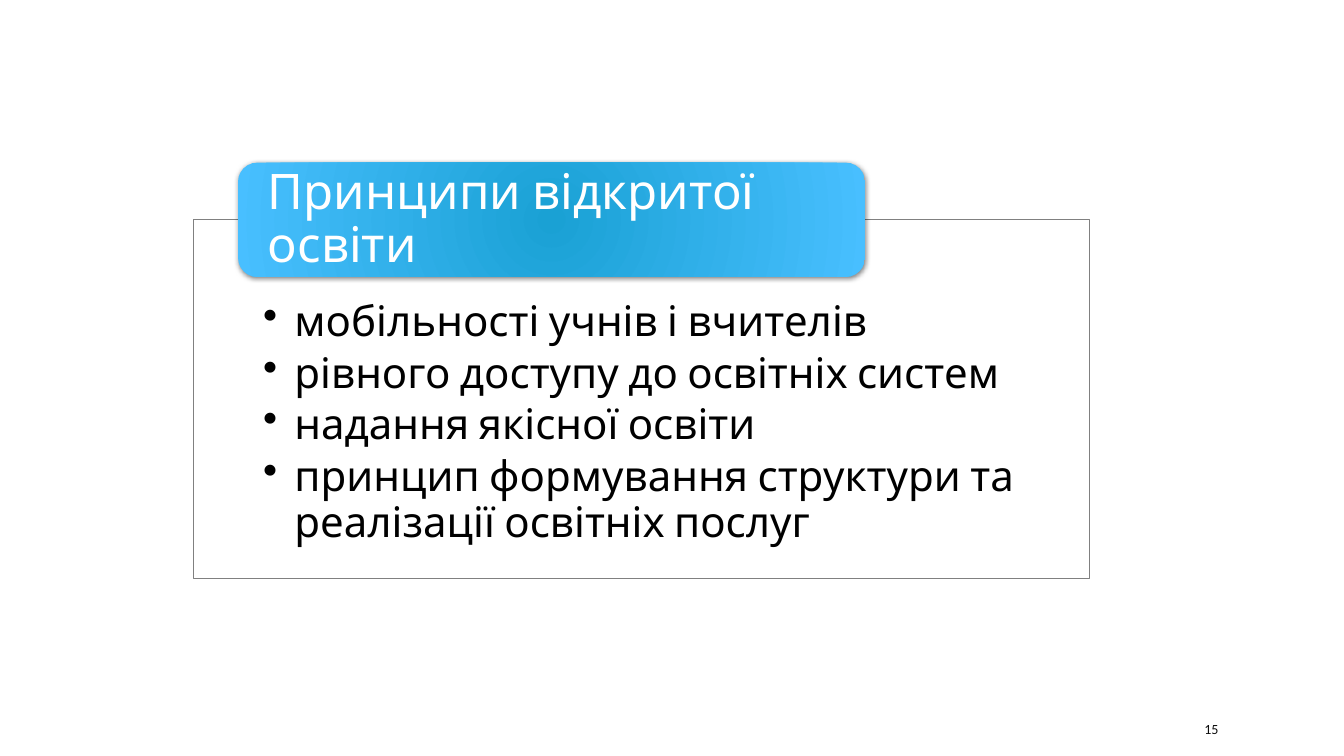
from lxml import etree
from pptx import Presentation
from pptx import util as u
from pptx.dml.color import RGBColor
from pptx.enum import shapes, text
from pptx.oxml import parse_xml
from pptx.oxml.ns import nsdecls, qn


def color(hex_code):
    return RGBColor.from_string(hex_code)


def style(paragraph, font_name, size, hex_code, spacing=0.9):
    paragraph.alignment = text.PP_ALIGN.LEFT
    paragraph.line_spacing = spacing
    for run in paragraph.runs:
        run.font.name = font_name
        run.font.size = u.Pt(size)
        run.font.color.rgb = color(hex_code)


prs = Presentation()
prs.slide_width, prs.slide_height = u.Cm(33.87), u.Cm(19.05)
slide = prs.slides.add_slide(prs.slide_layouts[5])

# Panel with the list of principles
panel = slide.shapes.add_shape(shapes.MSO_SHAPE.RECTANGLE,
                               u.Cm(4.88), u.Cm(5.54), u.Cm(22.58), u.Cm(9.04))
panel.shadow.inherit = False
panel.fill.solid()
panel.fill.fore_color.rgb = color("FFFFFF")
panel.line.color.rgb = color("808080")
panel.line.width = u.Pt(0.75)

principles = panel.text_frame
principles.word_wrap = True
principles.vertical_anchor = text.MSO_ANCHOR.TOP
principles.margin_left = principles.margin_right = u.Cm(1.75)
principles.margin_top, principles.margin_bottom = u.Cm(2.03), u.Cm(0.58)
principles.text = "\n".join([
    "мобільності учнів і вчителів",
    "рівного доступу до освітніх систем",
    "надання якісної освіти",
    "принцип формування структури та реалізації освітніх послуг",
])
for principle in principles.paragraphs:
    props = principle._p.get_or_add_pPr()
    props.set("marL", str(u.Cm(0.79)))
    props.set("indent", str(-u.Cm(0.79)))
    etree.SubElement(props, qn("a:buChar")).set("char", "•")
    principle.space_after = u.Pt(4.5)
    style(principle, "Cabin", 30, "000000")

# Banner with radial gradient and soft shadow
banner = slide.shapes.add_shape(shapes.MSO_SHAPE.ROUNDED_RECTANGLE,
                                u.Cm(6), u.Cm(4.1), u.Cm(15.8), u.Cm(2.88))
banner.line.fill.background()
banner.fill.gradient()
for stop, shade in zip(banner.fill.gradient_stops, ("1AA1D4", "48BFFF")):
    stop.color.rgb = color(shade)
gradient = banner._element.spPr.find(qn("a:gradFill"))
gradient.remove(gradient.find(qn("a:lin")))
gradient.append(parse_xml(
    f'<a:path {nsdecls("a")} path="circle">'
    '<a:fillToRect l="100000" t="100000" r="100000" b="100000"/></a:path>'))
banner._element.spPr.append(parse_xml(
    f'<a:effectLst {nsdecls("a")}>'
    '<a:outerShdw blurRad="50800" dist="12700" dir="5400000" rotWithShape="0">'
    '<a:srgbClr val="000000"><a:alpha val="50000"/></a:srgbClr>'
    '</a:outerShdw></a:effectLst>'))

# Title, brought in front of the banner
title = slide.shapes.title
title.left, title.top = u.Cm(6.15), u.Cm(4.24)
title.width, title.height = u.Cm(15.52), u.Cm(2.59)
heading = title.text_frame
heading.text = "Принципи відкритої освіти"
heading.word_wrap = True
heading.auto_size = text.MSO_AUTO_SIZE.NONE
heading.vertical_anchor = text.MSO_ANCHOR.MIDDLE
heading.margin_left = heading.margin_right = u.Cm(0.6)
heading.margin_top = heading.margin_bottom = 0
style(heading.paragraphs[0], "Cabin", 35, "FFFFFF")
slide.shapes._spTree.append(title._element)

# Page number
page_number = slide.shapes.add_textbox(u.Cm(30.1), u.Cm(17.98),
                                       u.Cm(2.69), u.Cm(0.76)).text_frame
page_number.word_wrap = True
page_number.vertical_anchor = text.MSO_ANCHOR.MIDDLE
page_number.text = "15"
style(page_number.paragraphs[0], "Calibri", 10, "0D0D0D", 1.0)

prs.save("out.pptx")
